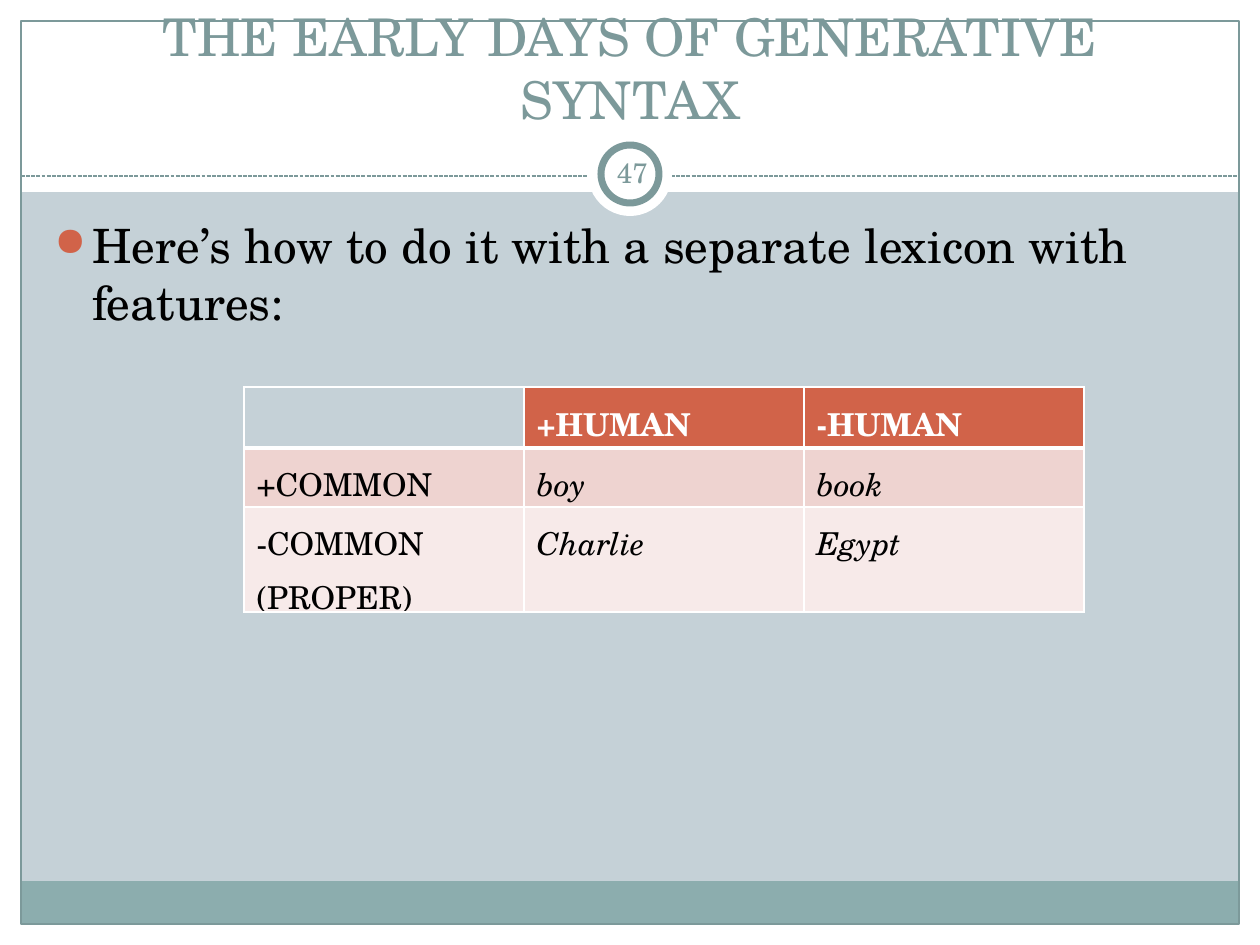
from lxml import etree
from pptx import Presentation
from pptx.dml.color import RGBColor
from pptx.enum.dml import MSO_LINE
from pptx.enum.shapes import MSO_CONNECTOR, MSO_SHAPE
from pptx.enum.text import MSO_ANCHOR, PP_ALIGN
from pptx.oxml.ns import qn
from pptx.util import Emu, Pt

RECTANGLE, OVAL = MSO_SHAPE.RECTANGLE, MSO_SHAPE.OVAL
STRAIGHT = MSO_CONNECTOR.STRAIGHT
SHORT_DASH = MSO_LINE.SQUARE_DOT
TOP, MIDDLE, BOTTOM = MSO_ANCHOR.TOP, MSO_ANCHOR.MIDDLE, MSO_ANCHOR.BOTTOM
LEFT, CENTER = PP_ALIGN.LEFT, PP_ALIGN.CENTER

BACKGROUND = RGBColor(0xC5, 0xD1, 0xD7)
WHITE = RGBColor(0xFF, 0xFF, 0xFF)
BLACK = RGBColor(0, 0, 0)
SLATE = RGBColor(0x7C, 0x99, 0x9A)
TEAL = RGBColor(0x8C, 0xAD, 0xAE)
RUST = RGBColor(0xD1, 0x63, 0x49)
PINK = RGBColor(0xEE, 0xD3, 0xD0)
PALE_PINK = RGBColor(0xF7, 0xEA, 0xE9)

FONT = "TeX Gyre Schola"
WIDTH, HEIGHT, EDGE = 1260, 945, 21
HEADER_HEIGHT = 192


def px(length):
    return Emu(round(length * 914400 / 126))


def add_child(parent, tag, **attributes):
    return etree.SubElement(parent, qn(tag), attributes)


def add_bullet(paragraph, symbol, color, percent, indent):
    properties = paragraph._p.get_or_add_pPr()
    properties.set("marL", str(px(indent)))
    properties.set("indent", str(-px(indent)))
    add_child(add_child(properties, "a:buClr"), "a:srgbClr", val=str(color))
    add_child(properties, "a:buSzPct", val=str(percent * 1000))
    add_child(properties, "a:buChar", char=symbol)


def write_text(frame, text, size=18, color=BLACK, bold=False, italic=False,
               align=LEFT, gap=0):
    for index, line in enumerate(text.split("\n")):
        paragraph = frame.paragraphs[0] if index == 0 else frame.add_paragraph()
        paragraph.alignment = align
        if index:
            paragraph.space_before = Pt(gap)
        run = paragraph.add_run()
        run.text = line
        font = run.font
        font.name, font.size = FONT, Pt(size)
        font.bold, font.italic = bold, italic
        font.color.rgb = color


class SlideBuilder:
    def __init__(self, slide):
        self.slide = slide
        background = slide.background.fill
        background.solid()
        background.fore_color.rgb = BACKGROUND

    def shape(self, kind, left, top, width, height, fill=None, line=None, weight=0.75):
        shape = self.slide.shapes.add_shape(kind, px(left), px(top), px(width), px(height))
        shape.shadow.inherit = False
        if fill is None:
            shape.fill.background()
        else:
            shape.fill.solid()
            shape.fill.fore_color.rgb = fill
        if line is None:
            shape.line.fill.background()
        else:
            shape.line.color.rgb = line
            shape.line.width = Pt(weight)

    def dashed_line(self, left, right, y):
        connector = self.slide.shapes.add_connector(STRAIGHT, px(left), px(y), px(right), px(y))
        connector.line.color.rgb = SLATE
        connector.line.width = Pt(0.75)
        connector.line.dash_style = SHORT_DASH
        add_child(connector._element.spPr, "a:effectLst")

    def text(self, text, left, top, width, height, anchor=TOP, inset=None,
             bullet=None, **style):
        box = self.slide.shapes.add_textbox(px(left), px(top), px(width), px(height))
        frame = box.text_frame
        frame.word_wrap = True
        frame.vertical_anchor = anchor
        if inset is not None:
            frame.margin_left = frame.margin_right = px(inset)
            frame.margin_top = frame.margin_bottom = px(inset)
        if bullet:
            add_bullet(frame.paragraphs[0], bullet, RUST, 85, 38)
        write_text(frame, text, **style)

    def cell_borders(self, cell, bottom_weight):
        properties = cell._tc.get_or_add_tcPr()
        weights = {"a:lnL": 1, "a:lnR": 1, "a:lnT": 1, "a:lnB": bottom_weight}
        for tag, weight in weights.items():
            border = add_child(properties, tag, w=str(Pt(weight)))
            add_child(add_child(border, "a:solidFill"), "a:srgbClr", val=str(WHITE))

    def table(self, rows, left, top, column_width, row_heights, row_fills):
        table = self.slide.shapes.add_table(
            len(rows), len(rows[0]), px(left), px(top),
            px(column_width * len(rows[0])), px(sum(row_heights))).table
        for column in table.columns:
            column.width = px(column_width)
        for row_index, texts in enumerate(rows):
            table.rows[row_index].height = px(row_heights[row_index])
            header = row_index == 0
            for column_index, text in enumerate(texts):
                cell = table.cell(row_index, column_index)
                cell.margin_top = px(13)
                self.cell_borders(cell, 3 if header else 1)
                if not text:
                    cell.fill.background()
                    continue
                cell.fill.solid()
                cell.fill.fore_color.rgb = row_fills[row_index]
                write_text(cell.text_frame, text, bold=header,
                           color=WHITE if header else BLACK,
                           italic=not header and column_index > 0, gap=4.3)


def main():
    presentation = Presentation()
    presentation.slide_width, presentation.slide_height = px(WIDTH), px(HEIGHT)
    builder = SlideBuilder(presentation.slides.add_slide(presentation.slide_layouts[6]))

    for margin in ((0, HEIGHT - EDGE, WIDTH, EDGE), (0, 0, WIDTH, HEADER_HEIGHT),
                   (0, 0, EDGE, HEIGHT), (WIDTH - EDGE, 0, EDGE, HEIGHT)):
        builder.shape(RECTANGLE, *margin, fill=WHITE)
    builder.shape(RECTANGLE, EDGE, 881, WIDTH - 2 * EDGE, 43, fill=TEAL)
    builder.shape(RECTANGLE, EDGE, EDGE, WIDTH - 2 * EDGE, HEIGHT - 2 * EDGE, line=SLATE)
    builder.dashed_line(EDGE, WIDTH - EDGE, 176)
    builder.shape(OVAL, 588, 132, 84, 84, fill=WHITE)
    builder.shape(OVAL, 601, 145, 58, 58, fill=WHITE, line=SLATE, weight=4)

    builder.text("THE EARLY DAYS OF GENERATIVE SYNTAX", 42, 31, 1176, 105,
                 anchor=BOTTOM, size=29.7, color=SLATE, align=CENTER)
    builder.text("47", 601, 142, 63, 60, anchor=MIDDLE, inset=6,
                 size=16, color=SLATE, align=CENTER)
    builder.text("Here’s how to do it with a separate lexicon with features:",
                 42, 210, 1172, 630, bullet="●", size=27)

    lexicon = [["", "+HUMAN", "-HUMAN"],
               ["+COMMON", "boy", "book"],
               ["-COMMON\n(PROPER)", "Charlie", "Egypt"]]
    builder.table(lexicon, 244, 387, 280, [61, 59, 105], [RUST, PINK, PALE_PINK])
    presentation.save("out.pptx")


if __name__ == "__main__":
    main()
